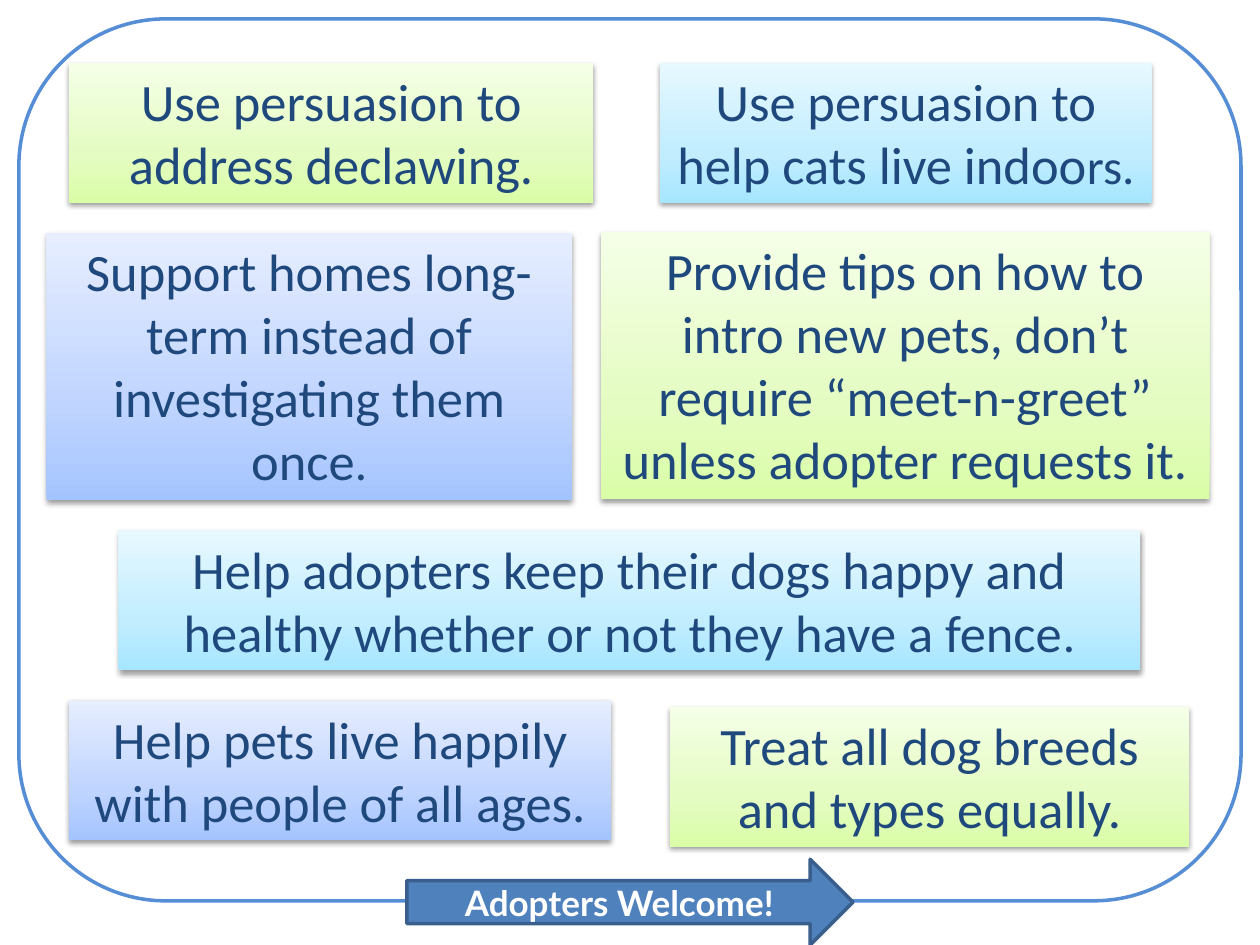
import pptx
import pptx.util
from pptx.dml.color import RGBColor
from pptx.enum.shapes import MSO_SHAPE
from pptx.enum.text import MSO_ANCHOR, MSO_AUTO_SIZE, PP_ALIGN
from pptx.oxml import parse_xml
from pptx.oxml.ns import nsdecls, qn

Pt = pptx.util.Pt

# Content: gradient stops as (percent, colour), running from bottom to top
GRADIENTS = {
    "aqua": [(0, "A7E6FF"), (35, "C1EDFF"), (100, "E7F8FF")],
    "green": [(0, "DAFDA7"), (35, "E4FCC2"), (100, "F5FFE7")],
    "blue": [(0, "A4C4FF"), (35, "BFD4FF"), (100, "E6EEFF")],
}

# (text, smaller ending, gradient, left, top, width, lines)
TIPS = [
    ("Use persuasion to help cats live indoo", "rs.", "aqua", 377.3, 36, 280.8, 2),
    ("Treat all dog breeds and types equally.", "", "green", 383, 403.9, 296.6, 2),
    ("Provide tips on how to intro new pets, don’t require “meet-n-greet” "
     "unless adopter requests it.", "", "green", 343.4, 132.5, 347.8, 4),
    ("Use persuasion to address declawing.", "", "green", 39.6, 36, 299.5, 2),
    ("Support homes long-term instead of investigating them once", ".",
     "blue", 26.6, 133.2, 300.2, 4),
    ("Help adopters keep their dogs happy and healthy whether or not "
     "they have a fence", ".", "aqua", 67.7, 303.1, 583.9, 2),
    ("Help pets live happily with people of all ages.", "",
     "blue", 39.6, 400.3, 309.6, 2),
]
LINE_HEIGHT, MARGINS = 36.36, 7.2


def rgb(value):
    return RGBColor.from_string(value)


def format_run(r, size, color, font, bold=None):
    r.font.size = Pt(size)
    r.font.color.rgb = rgb(color)
    r.font.name = font
    r.font.bold = bold


def add_outlined(s, kind, box, line, fill=None):
    sp = s.shapes.add_shape(kind, *map(Pt, box))
    sp.shadow.inherit = False
    if fill:
        sp.fill.solid()
        sp.fill.fore_color.rgb = rgb(fill)
    else:
        sp.fill.background()
    sp.line.color.rgb = rgb(line)
    sp.line.width = Pt(2)
    return sp


def set_gradient(sp, stops):
    sp.fill.gradient()
    sp.fill.gradient_angle = 90
    old = sp._element.spPr.find(".//" + qn("a:gsLst"))
    items = "".join(
        f'<a:gs pos="{pos * 1000}"><a:srgbClr val="{color}"/></a:gs>'
        for pos, color in stops)
    old.getparent().replace(
        old, parse_xml(f'<a:gsLst {nsdecls("a")}>{items}</a:gsLst>'))


def add_shadow(sp):
    sp._element.spPr.append(parse_xml(
        f'<a:effectLst {nsdecls("a")}>'
        f'<a:outerShdw blurRad="{Pt(3.1)}" dist="{Pt(1.6)}" dir="5400000" '
        'rotWithShape="0"><a:srgbClr val="000000"><a:alpha val="38000"/>'
        '</a:srgbClr></a:outerShdw></a:effectLst>'))


def add_tip(s, text, ending, gradient, left, top, width, lines):
    height = LINE_HEIGHT * lines + MARGINS
    sp = s.shapes.add_textbox(Pt(left), Pt(top), Pt(width), Pt(height))
    set_gradient(sp, GRADIENTS[gradient])
    sp.line.fill.background()
    add_shadow(sp)
    tf = sp.text_frame
    tf.word_wrap = True
    tf.auto_size = MSO_AUTO_SIZE.SHAPE_TO_FIT_TEXT
    p = tf.paragraphs[0]
    p.text = text
    p.alignment = PP_ALIGN.CENTER
    format_run(p.runs[0], 30, "1F497D", "Calibri")
    if ending:
        r = p.add_run()
        r.text = ending
        format_run(r, 28, "1F497D", "Calibri")


def main():
    prs = pptx.Presentation()
    prs.slide_width, prs.slide_height = Pt(720), Pt(540)
    s = prs.slides.add_slide(prs.slide_layouts[6])

    # Frame and banner arrow
    add_outlined(s, MSO_SHAPE.ROUNDED_RECTANGLE, (10.8, 10.8, 698.4, 504), "558ED5")
    arrow = add_outlined(s, MSO_SHAPE.RIGHT_ARROW, (232.5, 491, 255, 49),
                         "3A5F8C", "4F81BD")
    tf = arrow.text_frame
    tf.text = "Adopters Welcome!"
    tf.vertical_anchor = MSO_ANCHOR.MIDDLE
    p = tf.paragraphs[0]
    p.alignment = PP_ALIGN.CENTER
    format_run(p.runs[0], 20, "FFFFFF", "Lato", True)

    # Tip boxes
    for tip in TIPS:
        add_tip(s, *tip)

    prs.save("out.pptx")


if __name__ == "__main__":
    main()
